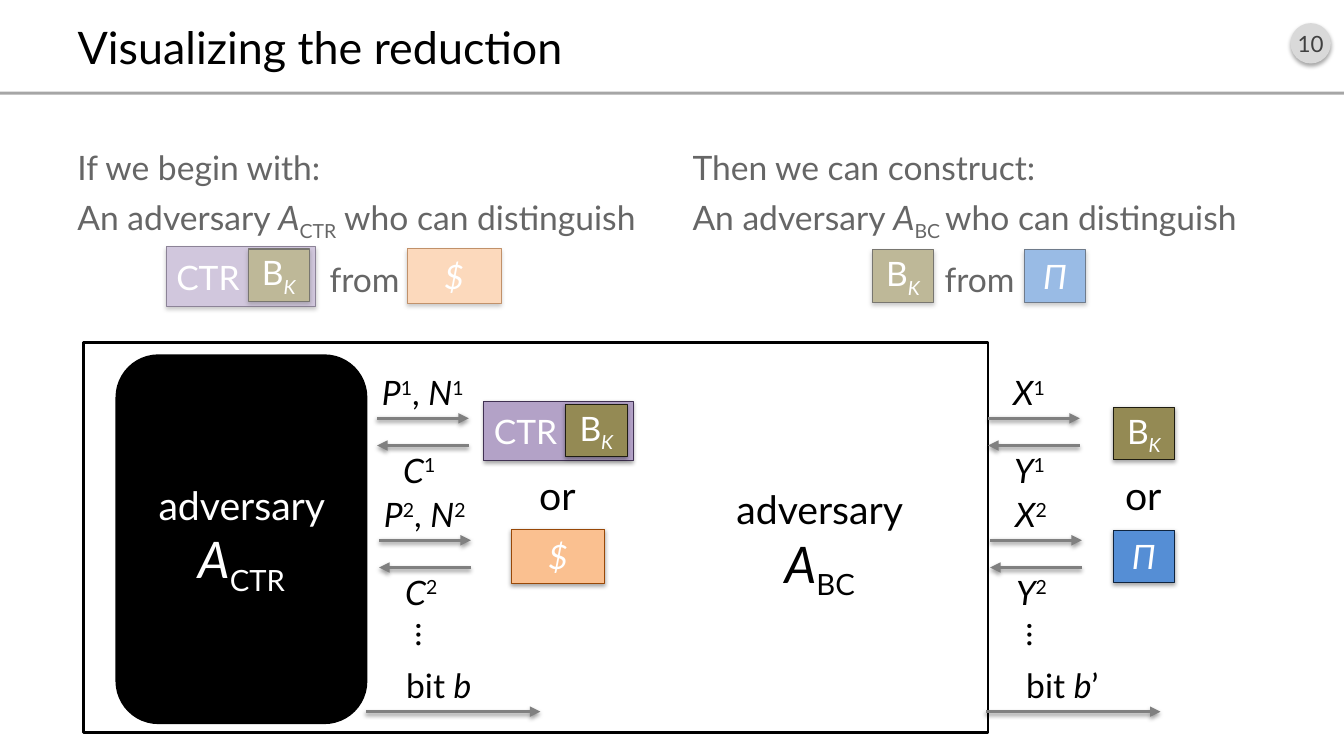
from lxml.etree import SubElement
from pptx import Presentation
from pptx.dml.color import RGBColor
from pptx.enum.shapes import MSO_CONNECTOR, MSO_SHAPE
from pptx.enum.text import MSO_ANCHOR, MSO_AUTO_SIZE, PP_ALIGN
from pptx.oxml.ns import qn
from pptx.util import Pt

PX = 9144  # 100 px to the inch
FONT = "Lato"
BLACK = RGBColor(0x00, 0x00, 0x00)
WHITE = RGBColor(0xFF, 0xFF, 0xFF)
GRAY = RGBColor(0x80, 0x80, 0x80)
RULE_GRAY = RGBColor(0xA6, 0xA6, 0xA6)
BADGE_GRAY = RGBColor(0xD9, 0xD9, 0xD9)
BADGE_TEXT = RGBColor(0x40, 0x40, 0x40)
PURPLE, PURPLE_EDGE = RGBColor(0xB3, 0xA2, 0xC7), RGBColor(0x40, 0x31, 0x52)
OLIVE, OLIVE_EDGE = RGBColor(0x94, 0x8A, 0x54), RGBColor(0x1E, 0x1C, 0x11)
ORANGE, ORANGE_EDGE = RGBColor(0xFA, 0xC0, 0x90), RGBColor(0x98, 0x48, 0x07)
BLUE, BLUE_EDGE = RGBColor(0x55, 0x8E, 0xD5), RGBColor(0x0F, 0x24, 0x3E)

# Run styles: i italic, _ subscript, ^ superscript, + large
TITLE = "Visualizing the reduction"
COLUMNS = [
    (67, "If we begin with:",
     [("An adversary ", ""), ("A", "i"), ("CTR", "_"), (" who can distinguish", "")]),
    (677, "Then we can construct:",
     [("An adversary ", ""), ("A", "i"), ("BC ", "_"), ("who can distinguish", "")]),
]
# kind: width, height, fill, edge, runs, alignment
BOXES = {
    "ctr": (148, 59, PURPLE, PURPLE_EDGE, [("CTR", "")], PP_ALIGN.LEFT),
    "cipher": (61, 52, OLIVE, OLIVE_EDGE, [("B", ""), ("K", "i_")], PP_ALIGN.CENTER),
    "random": (93, 54, ORANGE, ORANGE_EDGE, [("$", "i")], PP_ALIGN.CENTER),
    "permutation": (61, 52, BLUE, BLUE_EDGE, [("Π", "i")], PP_ALIGN.CENTER),
}
FADED_BOXES = [("ctr", 165, 245), ("cipher", 246, 247), ("random", 404, 247),
               ("cipher", 865, 248), ("permutation", 1016, 248)]
GAME_BOXES = [("ctr", 480, 398), ("cipher", 561, 401), ("random", 507, 525),
              ("cipher", 1104, 404), ("permutation", 1104, 526)]
OR_LEFTS = [525, 1106]
# arrow left, query letters, query label offset and width, answer letter, bit left, bit runs, bit width
EXCHANGES = [
    (374, "PN", -5, 105, "C", 363, [("bit ", ""), ("b", "i")], 88),
    (980, "X", 15, 54, "Y", 978, [("bit ", ""), ("b", "i"), ("’", "")], 93),
]
ROUND_TOP, ROUND_STEP, ROUND_SHIFT = 415, 121, 2
ARROW_LENGTH, ANSWER_DROP = 91, 27
BIT_TOP, BIT_LENGTH = 706, 173


def add_shadow(shape, opacity, offset):
    shape.shadow.inherit = False
    effects = shape._element.spPr.find(qn("a:effectLst"))
    shadow = SubElement(effects, qn("a:outerShdw"), blurRad=str(Pt(3.1)),
                        dist=str(Pt(offset)), dir="5400000", rotWithShape="0")
    color = SubElement(shadow, qn("a:srgbClr"), val="000000")
    SubElement(color, qn("a:alpha"), val=str(opacity * 1000))


def write(paragraph, runs, size, color=BLACK, align=PP_ALIGN.LEFT):
    paragraph.alignment = align
    paragraph.font.name = FONT
    paragraph.font.size = Pt(size)
    paragraph.font.color.rgb = color
    for text, style in runs:
        run = paragraph.add_run()
        run.text = text
        if "i" in style:
            run.font.italic = True
        if "+" in style:
            run.font.size = Pt(36)
        for mark, baseline in (("_", "-25000"), ("^", "30000")):
            if mark in style:
                run._r.get_or_add_rPr().set("baseline", baseline)


def add_shape(slide, kind, left, top, width, height, fill=None, edge=None, edge_width=2):
    shape = slide.shapes.add_shape(kind, left * PX, top * PX, width * PX, height * PX)
    shape.shadow.inherit = False
    if fill is None:
        shape.fill.background()
    else:
        shape.fill.solid()
        shape.fill.fore_color.rgb = fill
    if edge is None:
        shape.line.fill.background()
    else:
        shape.line.color.rgb = edge
        shape.line.width = Pt(edge_width)
    shape.text_frame.vertical_anchor = MSO_ANCHOR.MIDDLE
    return shape


def add_text(slide, left, top, width, height, paragraphs, size=24,
             align=PP_ALIGN.LEFT, wrap=False):
    box = slide.shapes.add_textbox(left * PX, top * PX, width * PX, height * PX)
    frame = box.text_frame
    frame.word_wrap = wrap
    for index, runs in enumerate(paragraphs):
        paragraph = frame.add_paragraph() if index else frame.paragraphs[0]
        write(paragraph, runs, size, align=align)
    return box


def add_boxes(slide, placed):
    for kind, left, top in placed:
        width, height, fill, edge, runs, align = BOXES[kind]
        shape = add_shape(slide, MSO_SHAPE.RECTANGLE, left, top, width, height, fill, edge, 0.75)
        add_shadow(shape, 35, 1.8)
        write(shape.text_frame.paragraphs[0], runs, 24, WHITE, align)


def add_arrow(slide, start, end, top):
    arrow = slide.shapes.add_connector(
        MSO_CONNECTOR.STRAIGHT, start * PX, top * PX, end * PX, top * PX)
    arrow.line.color.rgb = GRAY
    arrow.line.width = Pt(2.5)
    SubElement(arrow.line._get_or_add_ln(), qn("a:tailEnd"), type="triangle")
    effects = SubElement(arrow._element.spPr, qn("a:effectLst"))
    shadow = SubElement(effects, qn("a:outerShdw"), blurRad=str(Pt(3.1)),
                        dist=str(Pt(1.6)), dir="5400000", rotWithShape="0")
    SubElement(SubElement(shadow, qn("a:srgbClr"), val="000000"), qn("a:alpha"), val="38000")


def numbered(letters, number):
    """Runs such as P¹, N¹ for the letters PN."""
    runs = []
    for letter in letters:
        if runs:
            runs.append((", ", ""))
        runs += [(letter, "i"), (number, "^")]
    return runs


def add_header(slide):
    badge = add_shape(slide, MSO_SHAPE.OVAL, 1280, 23, 40, 40, BADGE_GRAY)
    add_shadow(badge, 35, 1.8)
    badge.text_frame.margin_left = badge.text_frame.margin_right = 0
    write(badge.text_frame.paragraphs[0], [("10", "")], 16, BADGE_TEXT, PP_ALIGN.CENTER)
    add_shape(slide, MSO_SHAPE.RECTANGLE, 0, 91, 1333, 3, RULE_GRAY)
    title = slide.shapes.title
    title.left, title.top, title.width, title.height = 67 * PX, 16 * PX, 1200 * PX, 60 * PX
    title.text_frame.auto_size = MSO_AUTO_SIZE.NONE
    title.text_frame.vertical_anchor = MSO_ANCHOR.MIDDLE
    write(title.text_frame.paragraphs[0], [(TITLE, "")], 32)


def add_claims(slide):
    for left, heading, claim in COLUMNS:
        box = add_text(slide, left, 121, 589, 70, [[(heading, "")]], wrap=True)
        box.text_frame.vertical_anchor = MSO_ANCHOR.BOTTOM
        body = add_text(slide, left, 190, 589, 505, [claim, [("from", "")]], wrap=True)
        last = body.text_frame.paragraphs[-1]
        last.alignment = PP_ALIGN.CENTER
        last.space_before = Pt(12)
    add_boxes(slide, FADED_BOXES)
    veil = add_shape(slide, MSO_SHAPE.RECTANGLE, 51, 142, 1216, 180, WHITE)
    color = veil._element.spPr.find(qn("a:solidFill")).find(qn("a:srgbClr"))
    SubElement(color, qn("a:alpha"), val="40000")


def add_exchange(slide, left, query, query_shift, query_width, answer, bit_left, bit, bit_width):
    for index in range(2):
        start = left + index * ROUND_SHIFT
        top = ROUND_TOP + index * ROUND_STEP
        end = start + ARROW_LENGTH
        number = str(index + 1)
        add_arrow(slide, start, end, top)
        add_text(slide, start + query_shift, top - 51, query_width, 50, [numbered(query, number)])
        add_arrow(slide, end, start, top + ANSWER_DROP)
        add_text(slide, start + 16, top + 26, 54, 50, [numbered(answer, number)])
    dots = add_text(slide, left + 30, 606, 45, 50, [[("…", "i")]])
    dots.rotation = 90
    add_arrow(slide, bit_left, bit_left + BIT_LENGTH, BIT_TOP)
    add_text(slide, bit_left + 30, 655, bit_width, 50, [bit])


def add_game(slide):
    inner = add_shape(slide, MSO_SHAPE.ROUNDED_RECTANGLE, 116, 353, 247, 364, BLACK, BLACK)
    write(inner.text_frame.paragraphs[0], [("adversary ", ""), ("A", "i+"), ("CTR", "_+")],
          28, WHITE, PP_ALIGN.CENTER)
    add_boxes(slide, GAME_BOXES)
    for left in OR_LEFTS:
        add_text(slide, left, 463, 57, 57, [[("or", "")]], 28)
    add_shape(slide, MSO_SHAPE.RECTANGLE, 83, 340, 897, 387, edge=BLACK)
    add_text(slide, 719, 477, 188, 118, [[("adversary", "")], [("A", "i+"), ("BC", "_+")]],
             28, PP_ALIGN.CENTER)
    for exchange in EXCHANGES:
        add_exchange(slide, *exchange)


def main():
    presentation = Presentation()
    presentation.slide_width, presentation.slide_height = 1333 * PX, 750 * PX
    slide = presentation.slides.add_slide(presentation.slide_layouts[5])
    add_header(slide)
    add_claims(slide)
    add_game(slide)
    presentation.save("out.pptx")


if __name__ == "__main__":
    main()
